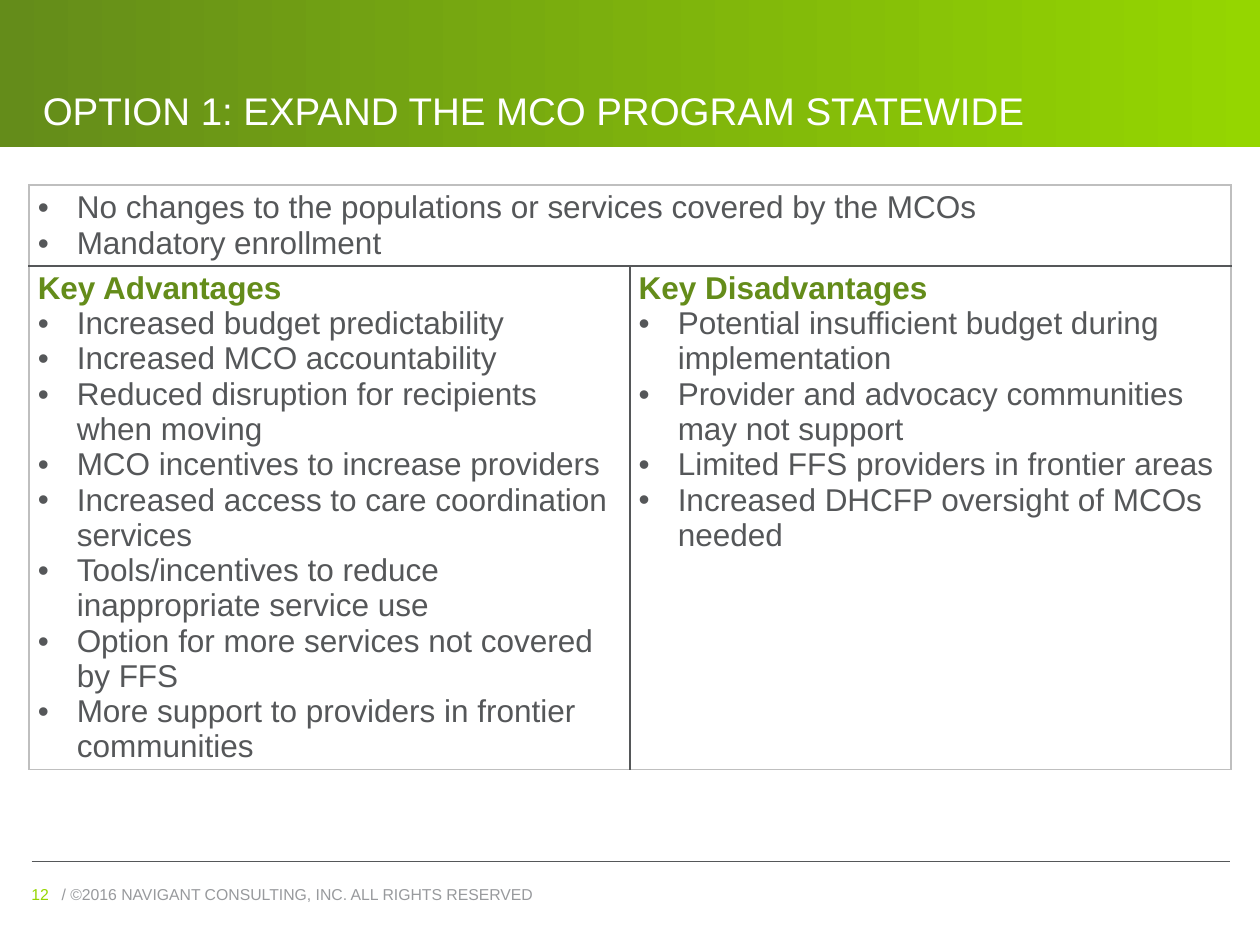
from lxml.etree import SubElement
from pptx import Presentation
from pptx.dml.color import RGBColor
from pptx.enum.shapes import MSO_CONNECTOR as Connector, MSO_SHAPE as Shape
from pptx.enum.text import MSO_ANCHOR as Anchor, PP_ALIGN as Align
from pptx.oxml.ns import qn
from pptx.util import Inches, Pt

WHITE = RGBColor(0xFF, 0xFF, 0xFF)
LIME = RGBColor(0x95, 0xD6, 0x00)
OLIVE = RGBColor(0x64, 0x8C, 0x1A)
CHARCOAL = RGBColor(0x55, 0x57, 0x59)
GREY = RGBColor(0x98, 0x9A, 0x9D)
SILVER = RGBColor(0xBF, 0xBF, 0xBF)

SUMMARY = [
    "No changes to the populations or services covered by the MCOs",
    "Mandatory enrollment",
]
ADVANTAGES = [
    "Increased budget predictability",
    "Increased MCO accountability",
    "Reduced disruption for recipients when moving",
    "MCO incentives to increase providers",
    "Increased access to care coordination services",
    "Tools/incentives to reduce inappropriate service use",
    "Option for more services not covered by FFS",
    "More support to providers in frontier communities",
]
DISADVANTAGES = [
    "Potential insufficient budget during implementation",
    "Provider and advocacy communities may not support",
    "Limited FFS providers in frontier areas",
    "Increased DHCFP oversight of MCOs needed",
]


def write(frame, text, size=18, color=CHARCOAL, bold=False, bullet=False):
    """Fill the frame's empty first paragraph, or add a new one."""
    para = frame.paragraphs[0] if not frame.text else frame.add_paragraph()
    para.alignment = Align.LEFT
    if bullet:
        props = para._p.get_or_add_pPr()
        props.set("marL", str(Inches(0.31)))
        props.set("indent", str(-Inches(0.31)))
        SubElement(props, qn("a:buFont"), typeface="Arial")
        SubElement(props, qn("a:buChar"), char="•")
    span = para.add_run()
    span.text = text
    span.font.name = "Arial"
    span.font.size = Pt(size)
    span.font.bold = bold
    span.font.color.rgb = color


def draw_border(cell, side, color):
    """Draw one side of a cell: L, R, T or B."""
    line = SubElement(cell._tc.get_or_add_tcPr(), qn(f"a:ln{side}"), w=str(Pt(1)))
    fill = SubElement(line, qn("a:solidFill"))
    SubElement(fill, qn("a:srgbClr"), val=str(color))


deck = Presentation()
deck.slide_width, deck.slide_height = Inches(10), Inches(7.5)
WIDTH, HEIGHT = deck.slide_width, deck.slide_height
page = deck.slides.add_slide(deck.slide_layouts[5])
title = page.shapes.title

# Header band, placed behind the title
band = page.shapes.add_shape(Shape.RECTANGLE, 0, 0, WIDTH, Inches(1.17))
band.shadow.inherit = False
band.line.fill.background()
band.fill.gradient()
band.fill.gradient_angle = 180
for stop, color in zip(band.fill.gradient_stops, (LIME, OLIVE)):
    stop.color.rgb = color
title._element.addprevious(band._element)

# Title
title.left, title.top = Inches(0.24), 0
title.width, title.height = Inches(9.53), Inches(1.11)
title.text_frame.vertical_anchor = Anchor.BOTTOM
write(title.text_frame, "OPTION 1: EXPAND THE MCO PROGRAM STATEWIDE", size=22, color=WHITE)

# Table: a summary row across two equal columns
margin = Inches(0.23)
table = page.shapes.add_table(
    2, 2, margin, Inches(1.47), WIDTH - 2 * margin, Inches(3.15)).table
table.first_row = table.horz_banding = False
table.rows[0].height, table.rows[1].height = Inches(0.6), Inches(2.55)
table.cell(0, 0).merge(table.cell(0, 1))

for row in range(2):
    for column in range(2):
        cell = table.cell(row, column)
        cell.margin_left = cell.margin_right = Inches(0.07)
        cell.margin_top = cell.margin_bottom = Inches(0.04)
        draw_border(cell, "L", CHARCOAL if column else SILVER)
        draw_border(cell, "R", SILVER if column or row == 0 else CHARCOAL)
        draw_border(cell, "T", CHARCOAL if row else SILVER)
        draw_border(cell, "B", SILVER if row else CHARCOAL)
        cell.fill.background()

for row, column, heading, items in (
    (0, 0, None, SUMMARY),
    (1, 0, "Key Advantages", ADVANTAGES),
    (1, 1, "Key Disadvantages", DISADVANTAGES),
):
    frame = table.cell(row, column).text_frame
    if heading:
        write(frame, heading, color=OLIVE, bold=True)
    for item in items:
        write(frame, item, bullet=True)

# Footer rule
rule_y = int(HEIGHT * 0.912)
rule = page.shapes.add_connector(
    Connector.STRAIGHT, Inches(0.25), rule_y, Inches(9.76), rule_y)
rule.line.color.rgb = CHARCOAL
rule.line.width = Pt(0.75)
SubElement(rule._element.spPr, qn("a:effectLst"))

# Footer text and page number
for left, width, text, color in (
    (0.39, 6.37, "/ ©2016 NAVIGANT CONSULTING, INC. ALL RIGHTS RESERVED", GREY),
    (0.15, 0.68, "12", LIME),
):
    box = page.shapes.add_textbox(
        Inches(left), Inches(6.97), Inches(width), Inches(0.22))
    box.text_frame.word_wrap = True
    write(box.text_frame, text, size=9, color=color)

deck.save("out.pptx")
